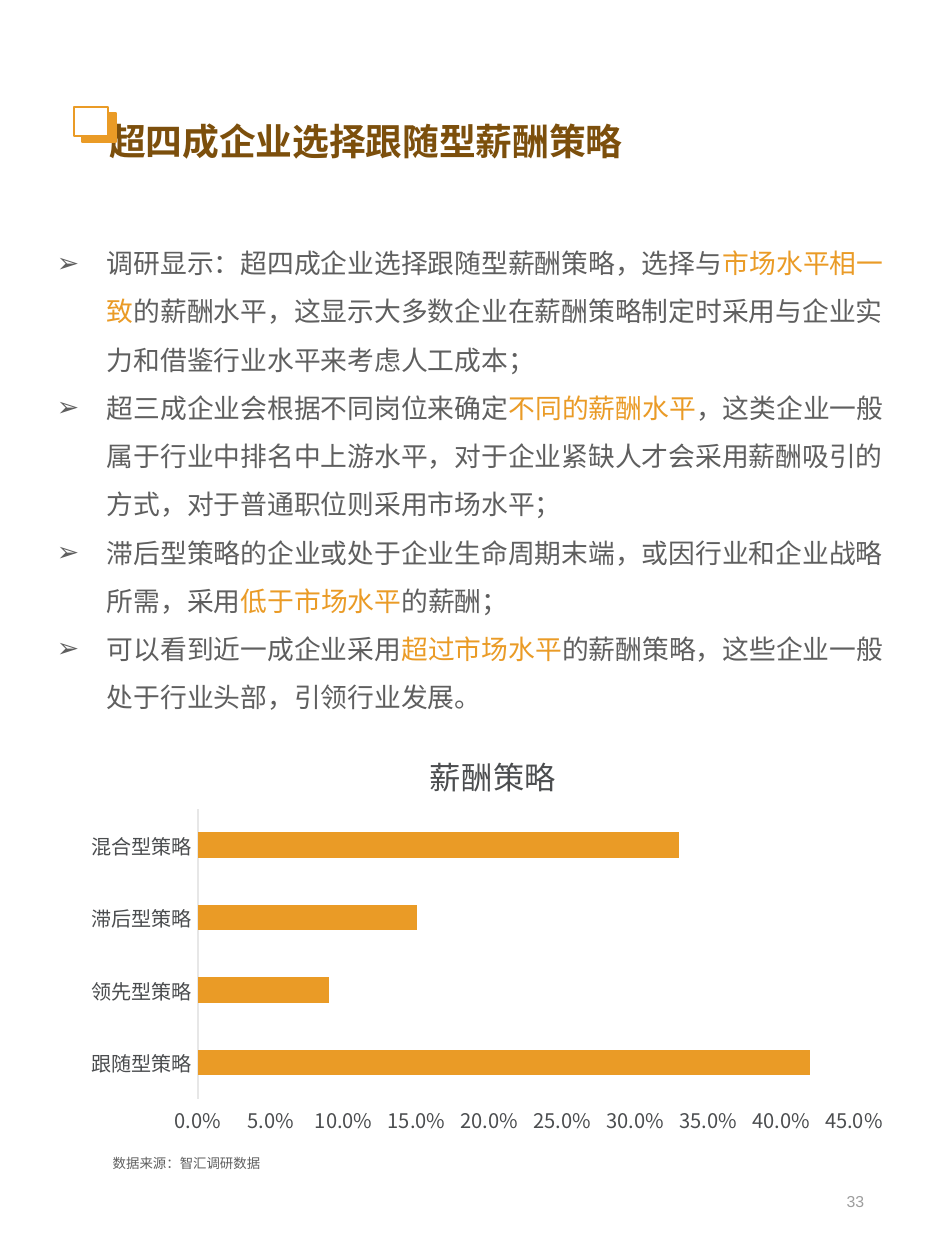
from lxml.etree import SubElement
from pptx import Presentation
from pptx.chart.data import CategoryChartData
from pptx.dml.color import RGBColor
from pptx.enum.chart import XL_CHART_TYPE as Chart, XL_TICK_MARK as Tick
from pptx.enum.shapes import MSO_SHAPE as Shape
from pptx.enum.text import MSO_ANCHOR as Anchor, PP_ALIGN as Align
from pptx.oxml.ns import qn
from pptx.util import Pt

PX = 5690
SIZE = 945, 1260
SANS = "Noto Sans CJK SC"
GOLD, BROWN, GREY, DARK = "EA9B26", "7C4F0C", "5F5F5F", "4B4D4F"
PALE, DIM, WHITE = "E7E7E7", "9D9D9D", "FFFFFF"

TITLE = "超四成企业选择跟随型薪酬策略"
# Each point: text before, highlight, text after
POINTS = [
    ("调研显示：超四成企业选择跟随型薪酬策略，选择与", "市场水平相一致",
     "的薪酬水平，这显示大多数企业在薪酬策略制定时采用与企业实力和借鉴行业水平来考虑人工成本；"),
    ("超三成企业会根据不同岗位来确定", "不同的薪酬水平",
     "，这类企业一般属于行业中排名中上游水平，对于企业紧缺人才会采用薪酬吸引的方式，"
     "对于普通职位则采用市场水平；"),
    ("滞后型策略的企业或处于企业生命周期末端，或因行业和企业战略所需，采用",
     "低于市场水平", "的薪酬；"),
    ("可以看到近一成企业采用", "超过市场水平",
     "的薪酬策略，这些企业一般处于行业头部，引领行业发展。"),
]
HEAD = "薪酬策略"
SHARES = {"跟随型策略": 0.42, "领先型策略": 0.09,
          "滞后型策略": 0.15, "混合型策略": 0.33}
SOURCE = "数据来源：智汇调研数据"
PAGE = "33"

CHART_BOX = 74, 720, 826, 423
PLOT_BOX = 198, 809, 656, 290
HEAD_SPOT = 424, 743
SQUARES = [((82, 113), GOLD), ((74, 107), WHITE)]


def emu(*vals):
    return [v * PX for v in vals]


def rgb(code):
    return RGBColor.from_string(code)


def style(font, size, color, name=SANS):
    font.size, font.name = Pt(size), name
    font.color.rgb = rgb(color)


def format_par(par, size, color, name=SANS, space=1.0):
    """Style a paragraph, with the sans face for its Chinese text."""
    style(par.font, size, color, name)
    par.line_spacing = space
    base = par._p.pPr.find(qn("a:defRPr"))
    SubElement(base, qn("a:ea"), typeface=SANS)


def add_text(slide, box):
    frame = slide.shapes.add_textbox(*emu(*box)).text_frame
    frame.word_wrap = True
    return frame


def add_bullet(par):
    props = par._p.get_or_add_pPr()
    props.set("marL", str(50 * PX))
    props.set("indent", str(-50 * PX))
    SubElement(props, qn("a:buFont"), typeface="Arial")
    SubElement(props, qn("a:buChar"), char="➢")


def add_title(slide):
    title = slide.shapes.title
    title.left, title.top, title.width, title.height = emu(35, 42, 865, 129)
    frame = title.text_frame
    frame.text = TITLE
    frame.margin_left = 74 * PX
    frame.vertical_anchor = Anchor.BOTTOM
    par = frame.paragraphs[0]
    par.alignment = Align.LEFT
    format_par(par, 16.5, BROWN, "Montserrat", 0.9)
    par.font.bold = True


def add_points(slide):
    frame = add_text(slide, (41, 223, 878, 497))
    for i, parts in enumerate(POINTS):
        par = frame.add_paragraph() if i else frame.paragraphs[0]
        add_bullet(par)
        format_par(par, 12, GREY, space=1.5)
        for text, color in zip(parts, (GREY, GOLD, GREY)):
            run = par.add_run()
            run.text = text
            run.font.color.rgb = rgb(color)


def place(node, index, spot, size=()):
    """Fix a chart part in place, as fractions of the chart box."""
    left, top, wide, high = CHART_BOX
    for old in node.findall(qn("c:layout")):
        node.remove(old)
    layout = node.makeelement(qn("c:layout"))
    node.insert(index, layout)
    manual = SubElement(layout, qn("c:manualLayout"))
    rules = [("layoutTarget", "inner")] if size else []
    rules += [("xMode", "edge"), ("yMode", "edge"),
              ("x", (spot[0] - left) / wide), ("y", (spot[1] - top) / high)]
    if size:
        rules += [("w", size[0] / wide), ("h", size[1] / high)]
    for tag, val in rules:
        SubElement(manual, qn("c:" + tag), val=str(val))


def add_chart(slide):
    data = CategoryChartData(number_format="0.0%")
    data.categories = list(SHARES)
    data.add_series(HEAD, list(SHARES.values()))
    chart = slide.shapes.add_chart(
        Chart.BAR_CLUSTERED, *emu(*CHART_BOX), data).chart
    style(chart.font, 10, DARK)
    chart.has_legend = False
    chart.has_title = True
    frame = chart.chart_title.text_frame
    frame.text = HEAD
    style(frame.paragraphs[0].font, 14, DARK)
    frame.paragraphs[0].font.bold = False

    plot = chart.plots[0]
    plot.gap_width = 182
    plot.vary_by_categories = False
    fill = plot.series[0].format.fill
    fill.solid()
    fill.fore_color.rgb = rgb(GOLD)

    cats, vals = chart.category_axis, chart.value_axis
    for axis in cats, vals:
        axis.major_tick_mark = axis.minor_tick_mark = Tick.NONE
        axis.has_major_gridlines = False
        style(axis.tick_labels.font, 9, DARK)
    cats.format.line.color.rgb = rgb(PALE)
    cats.format.line.width = Pt(0.75)
    vals.format.line.fill.background()
    vals.minimum_scale, vals.maximum_scale, vals.major_unit = 0, 0.45, 0.05
    vals.tick_labels.number_format = "0.0%"
    vals.tick_labels.number_format_is_linked = False
    root = chart._chartSpace.chart
    place(root.plotArea, 0, PLOT_BOX[:2], PLOT_BOX[2:])
    place(root.find(qn("c:title")), 1, HEAD_SPOT)


def add_squares(slide):
    for spot, color in SQUARES:
        box = slide.shapes.add_shape(Shape.RECTANGLE, *emu(*spot, 34, 29))
        box.shadow.inherit = False
        box.fill.solid()
        box.fill.fore_color.rgb = rgb(color)
        box.line.color.rgb = rgb(GOLD)
        box.line.width = Pt(1)


def add_footer(slide):
    par = add_text(slide, (97, 1142, 193, 35)).paragraphs[0]
    par.text = SOURCE
    format_par(par, 6, GREY, "Arial", 1.3)
    frame = add_text(slide, (668, 1168, 212, 67))
    frame.vertical_anchor = Anchor.MIDDLE
    par = frame.paragraphs[0]
    par.text = PAGE
    par.alignment = Align.RIGHT
    format_par(par, 7.1, DIM, "Arial")


def main():
    deck = Presentation()
    deck.slide_width, deck.slide_height = emu(*SIZE)
    slide = deck.slides.add_slide(deck.slide_layouts[5])
    for add in add_title, add_chart, add_points, add_squares, add_footer:
        add(slide)
    deck.save("out.pptx")


if __name__ == "__main__":
    main()
